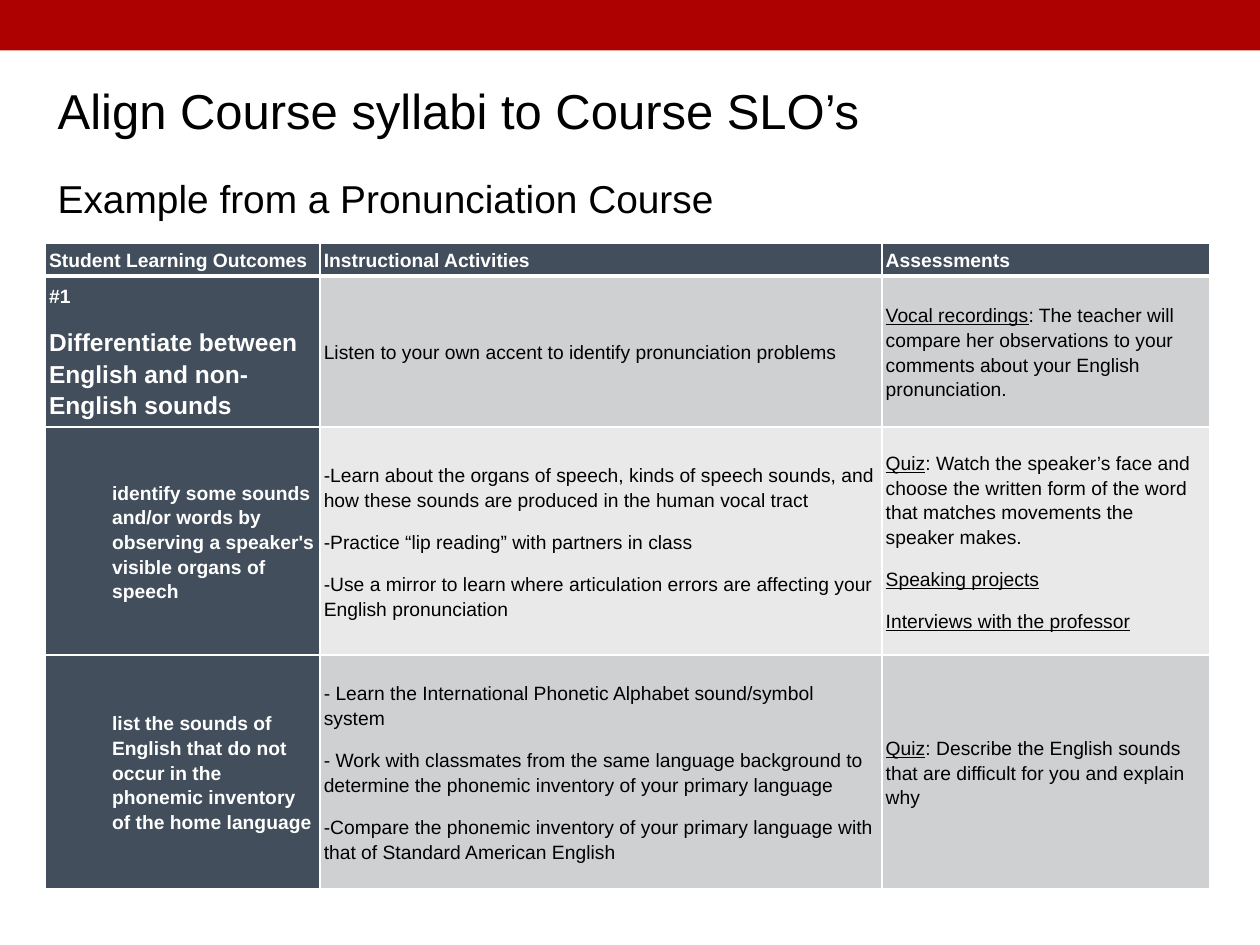
from lxml.etree import SubElement
from pptx import Presentation
from pptx.dml.color import RGBColor
from pptx.enum.shapes import MSO_SHAPE as Shape
from pptx.enum.text import MSO_ANCHOR as Anchor
from pptx.oxml.ns import qn
from pptx.util import Inches, Pt

COLORS = {
    "red": "AD0101",
    "slate": "424E5B",
    "dark_band": "CFD0D2",
    "light_band": "E9E9EA",
    "white": "FFFFFF",
    "black": "000000",
}
FONT = "Arial"
COLUMN_WIDTHS = [2.18, 4.46, 2.6]
ROW_HEIGHTS = [0.26, 1.2, 1.81, 1.85]
HEADINGS = ["Student Learning Outcomes", "Instructional Activities", "Assessments"]

# Each cell is a list of paragraphs; a pair holds an underlined lead and its plain rest.
ROWS = [
    [
        ["#1", "Differentiate between English and non-English sounds"],
        ["Listen to your own accent to identify pronunciation problems"],
        [("Vocal recordings", ": The teacher will compare her observations to your "
          "comments about your English pronunciation.")],
    ],
    [
        ["identify some sounds and/or words by observing a speaker's visible organs of speech"],
        ["-Learn about the organs of speech, kinds of speech sounds, and how these sounds "
         "are produced in the human vocal tract",
         "-Practice “lip reading” with partners in class",
         "-Use a mirror to learn where articulation errors are affecting your English "
         "pronunciation"],
        [("Quiz", ": Watch the speaker’s face and choose the written form of the word that "
          "matches movements the speaker makes."),
         ("Speaking projects", ""),
         ("Interviews with the professor", "")],
    ],
    [
        ["list the sounds of English that do not occur in the phonemic inventory of the "
         "home language"],
        ["- Learn the International Phonetic Alphabet sound/symbol system",
         "- Work with classmates from the same language background to determine the "
         "phonemic inventory of your primary language",
         "-Compare the phonemic inventory of your primary language with that of Standard "
         "American English"],
        [("Quiz", ": Describe the English sounds that are difficult for you and explain why")],
    ],
]


def color(name):
    return RGBColor.from_string(COLORS[name])


def add_span(para, text, size=11, ink="black", bold=False, underline=False):
    span = para.add_run()
    span.text = text
    font = span.font
    font.name, font.size, font.bold = FONT, Pt(size), bold
    font.underline = underline
    font.color.rgb = color(ink)


def add_text(page, text, left, top, width, height, size):
    box = page.shapes.add_textbox(Inches(left), Inches(top), Inches(width), Inches(height))
    box.text_frame.word_wrap = True
    add_span(box.text_frame.paragraphs[0], text, size=size)


def add_banner(page):
    banner = page.shapes.add_shape(Shape.RECTANGLE, 0, 0, Inches(10), Inches(0.4))
    banner.shadow.inherit = False
    banner.fill.solid()
    banner.fill.fore_color.rgb = color("red")
    banner.line.fill.background()


def set_borders(cell, top=1, bottom=1):
    properties = cell._tc.get_or_add_tcPr()
    for side, width in (("L", 1), ("R", 1), ("T", top), ("B", bottom)):
        line = SubElement(properties, qn(f"a:ln{side}"), w=str(Pt(width)))
        fill = SubElement(line, qn("a:solidFill"))
        SubElement(fill, qn("a:srgbClr"), val=COLORS["white"])


def fill_cell(cell, paragraphs, fill, indent=0, sizes=(11,), **style):
    cell.margin_left = cell.margin_right = Inches(0.03)
    cell.margin_top = cell.margin_bottom = 0
    cell.vertical_anchor = Anchor.MIDDLE
    cell.fill.solid()
    cell.fill.fore_color.rgb = color(fill)
    for index, content in enumerate(paragraphs):
        frame = cell.text_frame
        para = frame.add_paragraph() if index else frame.paragraphs[0]
        para.line_spacing = 1.15
        para.space_after = Pt(10)
        if indent:
            para._p.get_or_add_pPr().set("marL", str(Inches(indent)))
        size = sizes[min(index, len(sizes) - 1)]
        lead, rest = content if isinstance(content, tuple) else ("", content)
        if lead:
            add_span(para, lead, size=size, underline=True, **style)
        if rest:
            add_span(para, rest, size=size, **style)


def add_outcomes_table(page):
    table = page.shapes.add_table(
        len(ROW_HEIGHTS), len(COLUMN_WIDTHS), Inches(0.36), Inches(1.93),
        Inches(sum(COLUMN_WIDTHS)), Inches(sum(ROW_HEIGHTS))).table
    for column, width in zip(table.columns, COLUMN_WIDTHS):
        column.width = Inches(width)
    for row, height in zip(table.rows, ROW_HEIGHTS):
        row.height = Inches(height)

    content = [[[heading] for heading in HEADINGS]] + ROWS
    for row, cells in enumerate(content):
        for column, paragraphs in enumerate(cells):
            cell = table.cell(row, column)
            set_borders(cell, top=3 if row == 1 else 1, bottom=3 if row == 0 else 1)
            if row == 0 or column == 0:
                fill_cell(cell, paragraphs, "slate", indent=0.5 if row > 1 else 0,
                          sizes=(11, 14), ink="white", bold=True)
            else:
                fill_cell(cell, paragraphs, "dark_band" if row % 2 else "light_band")


def main():
    deck = Presentation()
    deck.slide_width, deck.slide_height = Inches(10), Inches(7.5)
    page = deck.slides.add_slide(deck.slide_layouts[6])
    add_banner(page)
    add_text(page, "Example from a Pronunciation Course", 0.36, 1.34, 8.62, 0.42, size=22.2)
    add_outcomes_table(page)
    add_text(page, "Align Course syllabi to Course SLO’s", 0.36, 0.59, 7.98, 0.57, size=28)
    deck.save("out.pptx")


if __name__ == "__main__":
    main()
